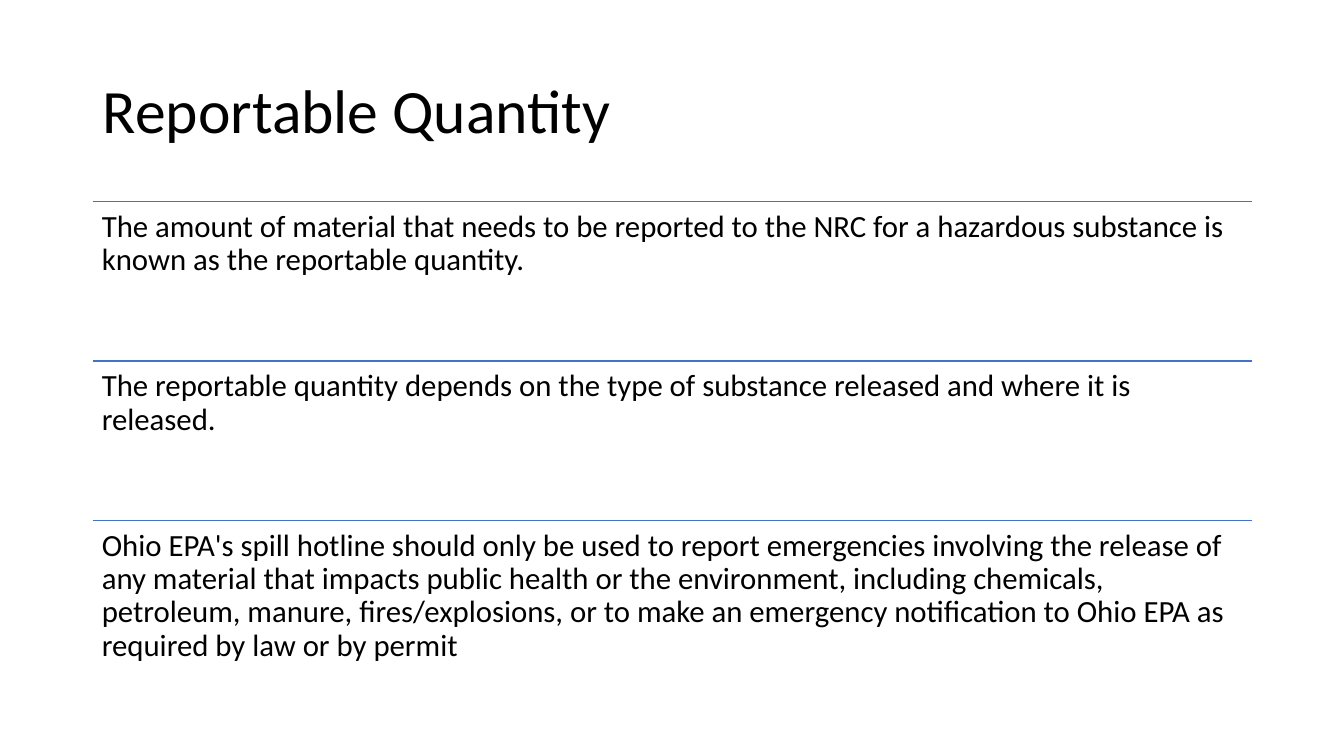
from lxml.etree import SubElement
from pptx import Presentation
from pptx.dml.color import RGBColor
from pptx.enum.shapes import MSO_CONNECTOR as Connector
from pptx.enum.text import MSO_ANCHOR as Anchor, PP_ALIGN as Align
from pptx.oxml.ns import qn
from pptx.util import Inches, Pt

BLACK = RGBColor(0x00, 0x00, 0x00)
BLUE = RGBColor(0x44, 0x72, 0xC4)
FONT = "Calibri"

LEFT, WIDTH = 0.92, 11.5
LIST_TOP, LIST_HEIGHT = 2, 4.75

STATEMENTS = [
    "The amount of material that needs to be reported to the NRC for a "
    "hazardous substance is known as the reportable quantity.",
    "The reportable quantity depends on the type of substance released and "
    "where it is released.",
    "Ohio EPA's spill hotline should only be used to report emergencies "
    "involving the release of any material that impacts public health or the "
    "environment, including chemicals, petroleum, manure, fires/explosions, "
    "or to make an emergency notification to Ohio EPA as required by law or "
    "by permit",
]


def write_text(frame, text, size, color=BLACK, anchor=Anchor.TOP, inset=0.09):
    frame.word_wrap = True
    frame.vertical_anchor = anchor
    frame.margin_left = frame.margin_right = Inches(inset)
    frame.margin_top = frame.margin_bottom = Inches(inset)
    paragraph = frame.paragraphs[0]
    paragraph.alignment = Align.LEFT
    paragraph.line_spacing = 0.9
    run = paragraph.add_run()
    run.text = text
    run.font.name = FONT
    run.font.size = Pt(size)
    run.font.color.rgb = color


def add_title(slide, text):
    title = slide.shapes.title
    title.left, title.top = Inches(LEFT), Inches(0.4)
    title.width, title.height = Inches(WIDTH), Inches(1.45)
    write_text(title.text_frame, text, size=44, anchor=Anchor.MIDDLE, inset=0.1)


def add_rule(slide, top):
    rule = slide.shapes.add_connector(
        Connector.STRAIGHT,
        Inches(LEFT), Inches(top), Inches(LEFT + WIDTH), Inches(top))
    rule.line.color.rgb = BLUE
    rule.line.width = Pt(1)
    SubElement(rule._element.spPr, qn("a:effectLst"))


def add_statement(slide, text, top, height):
    box = slide.shapes.add_textbox(
        Inches(LEFT), Inches(top), Inches(WIDTH), Inches(height))
    write_text(box.text_frame, text, size=22)


def main():
    presentation = Presentation()
    presentation.slide_width = Inches(13.33)
    presentation.slide_height = Inches(7.5)
    slide = presentation.slides.add_slide(presentation.slide_layouts[5])

    add_title(slide, "Reportable Quantity")

    # Ruled list in rows of equal height
    row_height = LIST_HEIGHT / len(STATEMENTS)
    for index, statement in enumerate(STATEMENTS):
        top = LIST_TOP + index * row_height
        add_rule(slide, top)
        add_statement(slide, statement, top, row_height)

    presentation.save("out.pptx")


if __name__ == "__main__":
    main()
